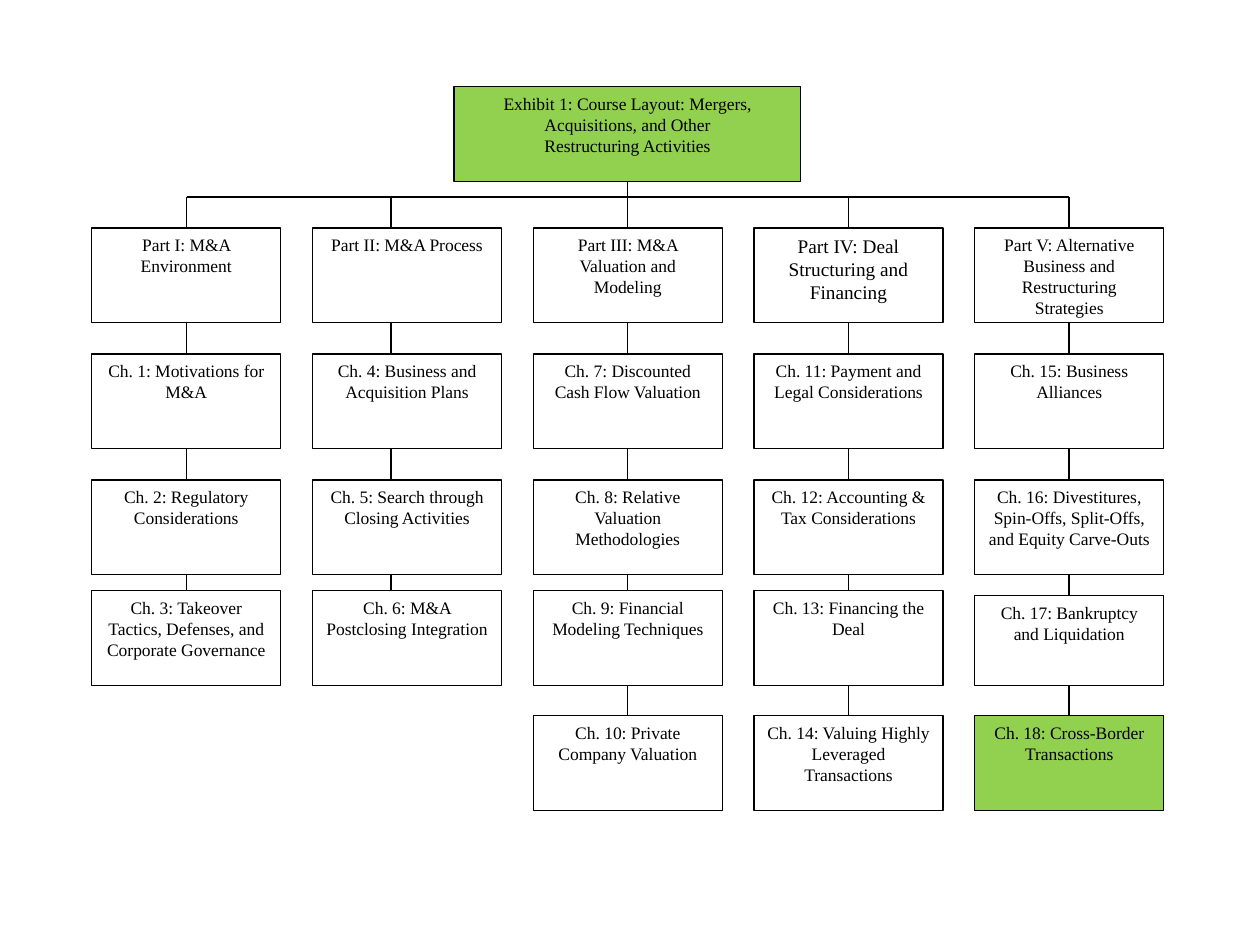
from dataclasses import dataclass

from lxml.etree import SubElement
from pptx import Presentation
from pptx.dml.color import RGBColor
from pptx.enum.shapes import MSO_CONNECTOR, MSO_SHAPE
from pptx.enum.text import MSO_ANCHOR, PP_ALIGN
from pptx.oxml.ns import qn
from pptx.util import Cm, Pt


@dataclass(frozen=True)
class Theme:
    font: str = "Times New Roman"
    ink: RGBColor = RGBColor(0, 0, 0)
    plain: RGBColor = RGBColor(255, 255, 255)
    highlight: RGBColor = RGBColor(0x92, 0xD0, 0x50)
    body_size: int = 10
    large_size: int = 11
    line_width: float = 0.75


class ChartSlide:
    def __init__(self, slide, theme):
        self.slide = slide
        self.theme = theme

    def box(self, text, left, top, width, height, fill=None, size=None):
        shape = self.slide.shapes.add_shape(
            MSO_SHAPE.RECTANGLE, Cm(left), Cm(top), Cm(width), Cm(height))
        shape.shadow.inherit = False
        shape.fill.solid()
        shape.fill.fore_color.rgb = fill or self.theme.plain
        shape.line.color.rgb = self.theme.ink
        shape.line.width = Pt(self.theme.line_width)
        frame = shape.text_frame
        frame.word_wrap = True
        frame.vertical_anchor = MSO_ANCHOR.TOP
        frame.text = text
        for paragraph in frame.paragraphs:
            paragraph.alignment = PP_ALIGN.CENTER
            paragraph.font.name = self.theme.font
            paragraph.font.size = Pt(size or self.theme.body_size)
            paragraph.font.color.rgb = self.theme.ink

    def line(self, x1, y1, x2, y2):
        connector = self.slide.shapes.add_connector(
            MSO_CONNECTOR.STRAIGHT, Cm(x1), Cm(y1), Cm(x2), Cm(y2))
        connector.line.color.rgb = self.theme.ink
        connector.line.width = Pt(self.theme.line_width)
        SubElement(connector._element.spPr, qn("a:effectLst"))


TITLE = ("Exhibit 1: Course Layout: Mergers, Acquisitions, and Other\n"
         "Restructuring Activities")
PARTS = [
    ["Part I: M&A Environment",
     "Ch. 1: Motivations for M&A",
     "Ch. 2: Regulatory Considerations",
     "Ch. 3: Takeover Tactics, Defenses, and Corporate Governance"],
    ["Part II: M&A Process",
     "Ch. 4: Business and Acquisition Plans",
     "Ch. 5: Search through Closing Activities",
     "Ch. 6: M&A Postclosing Integration"],
    ["Part III: M&A Valuation and Modeling",
     "Ch. 7: Discounted Cash Flow Valuation",
     "Ch. 8: Relative Valuation Methodologies",
     "Ch. 9: Financial Modeling Techniques",
     "Ch. 10: Private Company Valuation"],
    ["Part IV: Deal Structuring and Financing",
     "Ch. 11: Payment and Legal Considerations",
     "Ch. 12: Accounting & Tax Considerations",
     "Ch. 13: Financing the Deal",
     "Ch. 14: Valuing Highly Leveraged Transactions"],
    ["Part V: Alternative Business and Restructuring Strategies",
     "Ch. 15: Business Alliances",
     "Ch. 16: Divestitures, Spin-Offs, Split-Offs, and Equity Carve-Outs",
     "Ch. 17: Bankruptcy and Liquidation",
     "Ch. 18: Cross-Border Transactions"],
]
LARGE_HEADING = PARTS[3][0]
SHORT_BOX = PARTS[4][3]
HIGHLIGHTED = PARTS[4][4]

COLUMN_LEFT, COLUMN_PITCH = 1.85, 4.45
BOX_WIDTH, BOX_HEIGHT = 3.81, 1.91
ROW_TOPS = [4.6, 7.14, 9.68, 11.91, 14.43]
SPINES = [3.76, 7.88, 12.65, 17.1, 21.55]
TITLE_TOP, TITLE_WIDTH = 1.75, 6.99
BUS_TOP = 3.97
SHORTENING = 0.1


def draw_column(chart, labels, left, spine):
    """Draw one part with its chapters, each joined to what stands above."""
    theme = chart.theme
    bottom = BUS_TOP
    for label, top in zip(labels, ROW_TOPS):
        height = BOX_HEIGHT
        if label == SHORT_BOX:
            top += SHORTENING
            height -= SHORTENING
        chart.line(spine, bottom, spine, top)
        chart.box(label, left, top, BOX_WIDTH, height,
                  theme.highlight if label == HIGHLIGHTED else theme.plain,
                  theme.large_size if label == LARGE_HEADING else theme.body_size)
        bottom = top + height


def main():
    presentation = Presentation()
    presentation.slide_width, presentation.slide_height = Cm(25.4), Cm(19.05)
    slide = presentation.slides.add_slide(presentation.slide_layouts[6])
    chart = ChartSlide(slide, Theme())

    middle = SPINES[2]
    chart.box(TITLE, middle - TITLE_WIDTH / 2, TITLE_TOP, TITLE_WIDTH, BOX_HEIGHT,
              chart.theme.highlight)
    chart.line(middle, TITLE_TOP + BOX_HEIGHT, middle, BUS_TOP)
    chart.line(SPINES[0], BUS_TOP, SPINES[-1], BUS_TOP)
    for column, (labels, spine) in enumerate(zip(PARTS, SPINES)):
        draw_column(chart, labels, COLUMN_LEFT + column * COLUMN_PITCH, spine)

    presentation.save("out.pptx")


if __name__ == "__main__":
    main()
